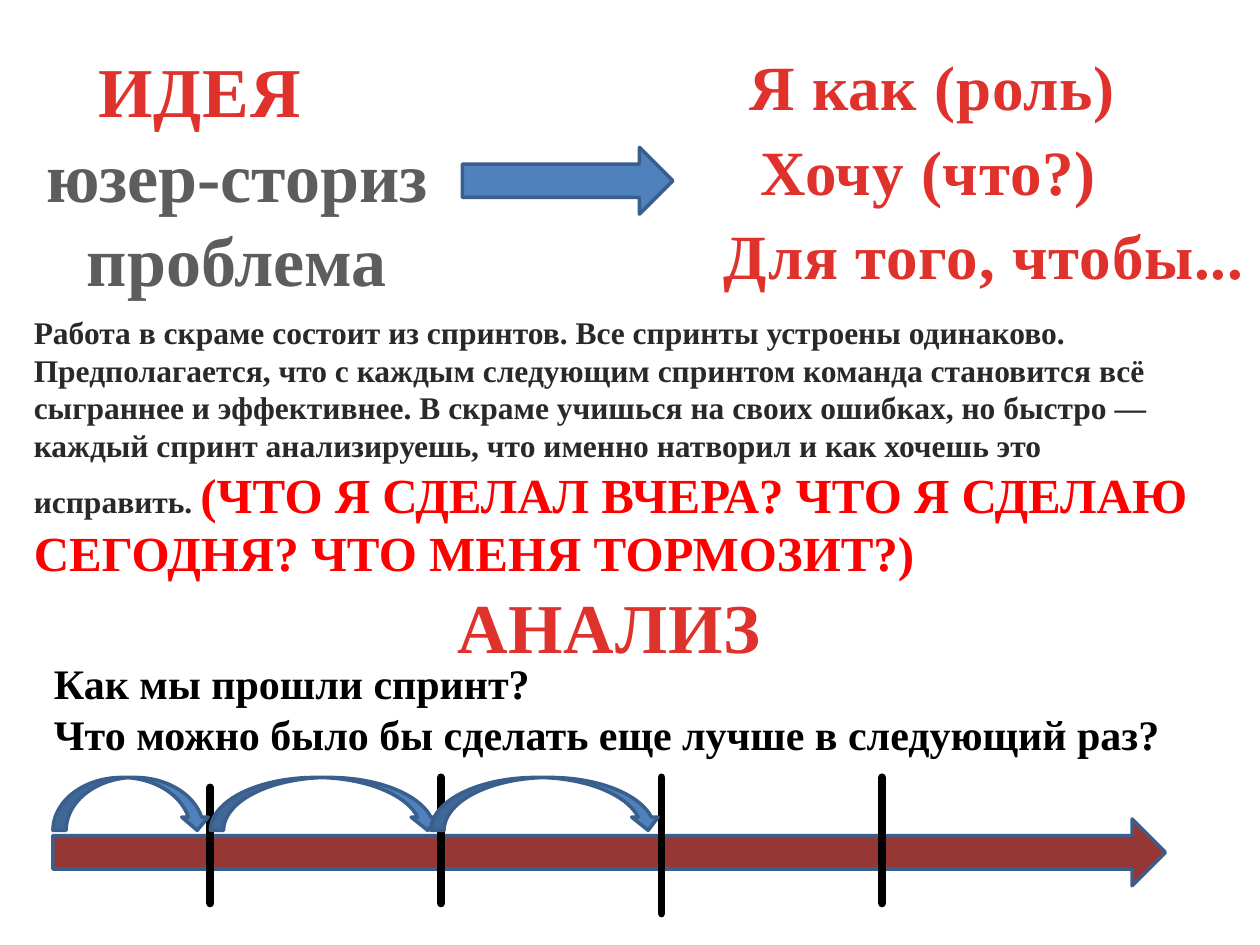
import pptx
import pptx.dml.color
import pptx.enum.shapes
import pptx.enum.text
import pptx.oxml
import pptx.util
from pptx.util import Inches

SHAPE = pptx.enum.shapes.MSO_SHAPE
ALIGN = pptx.enum.text.PP_ALIGN
ANCHOR = pptx.enum.text.MSO_ANCHOR
FIT = pptx.enum.text.MSO_AUTO_SIZE
NS = 'xmlns:a="http://schemas.openxmlformats.org/drawingml/2006/main"'

RED, GREY, BLUE = "E0322D", "5D5D5D", "4F81BD"


def color(code):
    return pptx.dml.color.RGBColor.from_string(code)


class Page:
    font = "Times New Roman"
    edge = "3A5F8C"

    def __init__(self, slide):
        self.slide = slide

    def shape(self, kind, x, y, w, h, fill):
        item = self.slide.shapes.add_shape(
            kind, Inches(x), Inches(y), Inches(w), Inches(h))
        item.shadow.inherit = False
        item.fill.solid()
        item.fill.fore_color.rgb = color(fill)
        item.line.color.rgb = color(self.edge)
        item.line.width = pptx.util.Pt(2)

    def tick(self, x, top, end):
        """Draw a thick upright mark with round ends."""
        item = self.slide.shapes.add_connector(
            pptx.enum.shapes.MSO_CONNECTOR.STRAIGHT,
            Inches(x), Inches(top), Inches(x), Inches(end))
        item.line.color.rgb = color("000000")
        item.line.width = pptx.util.Pt(4.5)
        item.line._get_or_add_ln().set("cap", "rnd")
        item._element.spPr.append(
            pptx.oxml.parse_xml(f"<a:effectLst {NS}/>"))

    def text(self, x, y, w, h, paras, align=ALIGN.LEFT, wrap=False,
             anchor=ANCHOR.TOP, space=0):
        """Add a text box; each paragraph is a list of (words, size, colour)."""
        box = self.slide.shapes.add_textbox(
            Inches(x), Inches(y), Inches(w), Inches(h))
        frame = box.text_frame
        frame.word_wrap = wrap
        frame.auto_size = FIT.SHAPE_TO_FIT_TEXT
        frame.vertical_anchor = anchor
        for i, runs in enumerate(paras):
            para = frame.add_paragraph() if i else frame.paragraphs[0]
            para.alignment = align
            for words, size, code in runs:
                run = para.add_run()
                run.text = words
                run.font.name = self.font
                run.font.size = pptx.util.Pt(size)
                run.font.bold = True
                run.font.color.rgb = color(code)
                if space:
                    run.font._element.set("spc", str(int(space * 100)))

    def head(self, x, y, w, h, words, size, wrap=False):
        self.text(x, y, w, h, [[(words, size, RED)]], ALIGN.CENTER, wrap,
                  space=0.5)


def main():
    deck = pptx.Presentation()
    deck.slide_width, deck.slide_height = Inches(10), Inches(7.5)
    page = Page(deck.slides.add_slide(deck.slide_layouts[6]))

    # Sprint time line
    page.shape(SHAPE.RIGHT_ARROW, 0.42, 6.5, 8.83, 0.53, "953735")
    for x, top, end in [(1.67, 6.25, 7.17), (3.5, 6.17, 7.17),
                        (5.25, 6.17, 7.25), (7, 6.17, 7.17)]:
        page.tick(x, top, end)
    for x, w in [(0.42, 1.25), (1.67, 1.83), (3.42, 1.83)]:
        page.shape(SHAPE.CURVED_DOWN_ARROW, x, 6.17, w, 0.42, BLUE)

    # Review of the sprint
    page.head(2.92, 4.58, 3.83, 0.77, "АНАЛИЗ", 40, wrap=True)
    asks = ["Как мы прошли спринт?",
            "Что можно было бы сделать еще лучше в следующий раз?"]
    page.text(0.33, 5.17, 9.06, 0.91, [[(ask, 24, "000000")] for ask in asks])
    page.text(0.17, 2.42, 9.5, 2.26, [[
        ("Работа в скраме состоит из спринтов. Все спринты устроены "
         "одинаково. Предполагается, что с каждым следующим спринтом команда "
         "становится всё сыграннее и эффективнее. В скраме учишься на своих "
         "ошибках, но быстро — каждый спринт анализируешь, что именно "
         "натворил и как хочешь это исправить. ", 18, "292929"),
        ("(ЧТО Я СДЕЛАЛ ВЧЕРА? ЧТО Я СДЕЛАЮ СЕГОДНЯ? ЧТО МЕНЯ ТОРМОЗИТ?)",
         28, "FF0000"),
    ]], wrap=True, anchor=ANCHOR.MIDDLE)

    # From idea to user story
    page.head(0.67, 0.33, 1.83, 0.77, "ИДЕЯ", 40)
    page.text(0.25, 1, 3.26, 1.45,
              [[(word, 40, GREY)] for word in ("юзер-сториз", "проблема")],
              ALIGN.CENTER)
    page.shape(SHAPE.RIGHT_ARROW, 3.67, 1.17, 1.67, 0.53, BLUE)
    for x, y, w, words in [(5.83, 0.33, 3.14, "Я как (роль)"),
                           (5.92, 1, 2.9, "Хочу (что?)"),
                           (5.62, 1.67, 4.38, "Для того, чтобы...")]:
        page.head(x, y, w, 0.71, words, 36)

    deck.save("out.pptx")


if __name__ == "__main__":
    main()
